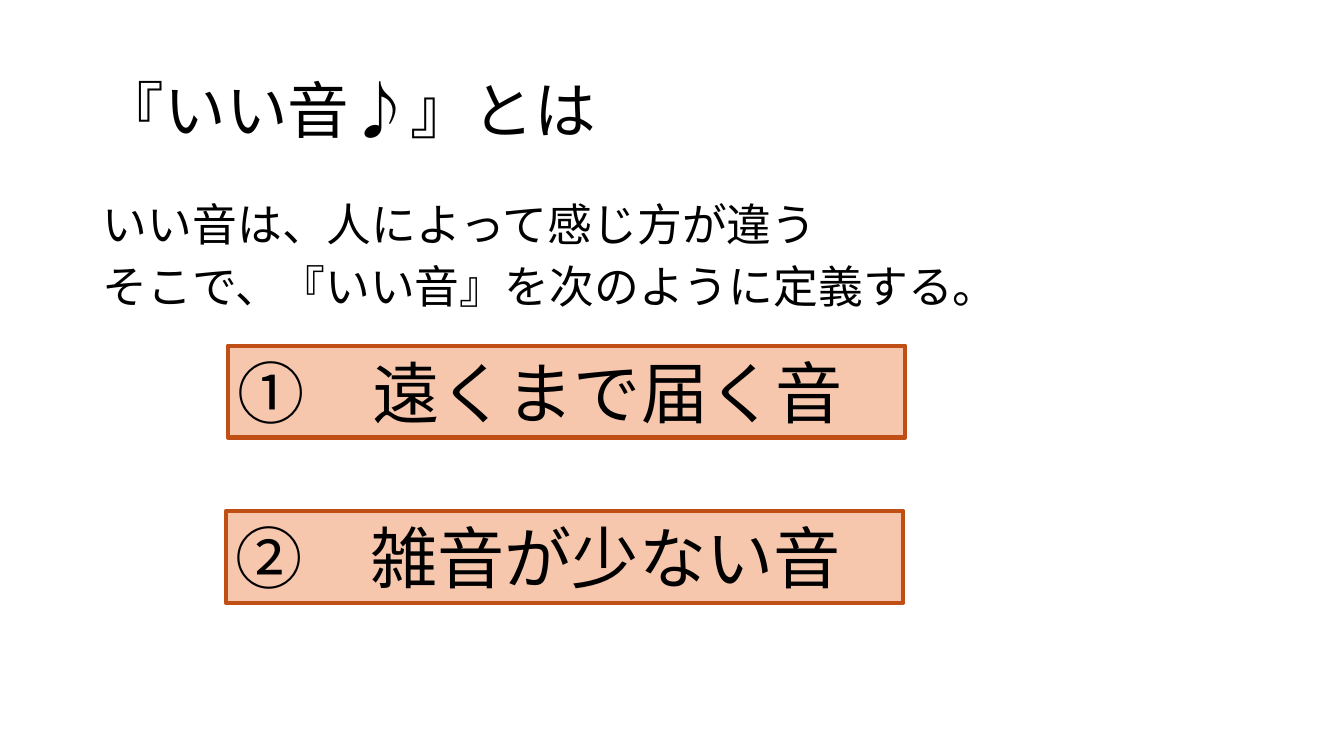
import pptx
import pptx.dml.color
import pptx.enum.shapes
import pptx.enum.text
import pptx.oxml
import pptx.oxml.ns
import pptx.util
from lxml import etree
from pptx.util import Inches

BLACK = pptx.dml.color.RGBColor(0x00, 0x00, 0x00)
PEACH = pptx.dml.color.RGBColor(0xF6, 0xC6, 0xAD)
RUST = pptx.dml.color.RGBColor(0xC0, 0x4F, 0x15)
FONT = "Noto Sans CJK JP"
ANCHOR = pptx.enum.text.MSO_ANCHOR
LEFT = pptx.enum.text.PP_ALIGN.LEFT


def apply(target, values):
    for name, value in values.items():
        setattr(target, name, value)


class DefinitionSlide:
    """Holds the text style and the slide being built."""

    def __init__(self, presentation):
        self.slide = presentation.slides.add_slide(presentation.slide_layouts[1])

    def place(self, shape, left, top, width, height):
        apply(shape, {"left": Inches(left), "top": Inches(top),
                      "width": Inches(width), "height": Inches(height)})

    def set_text(self, shape, lines, size, anchor, paragraph_format):
        frame = shape.text_frame
        apply(frame, {"text": "\n".join(lines), "word_wrap": True,
                      "vertical_anchor": anchor,
                      "auto_size": pptx.enum.text.MSO_AUTO_SIZE.NONE})
        for paragraph in frame.paragraphs:
            apply(paragraph, {"alignment": LEFT, **paragraph_format})
            for run in paragraph.runs:
                apply(run.font, {"name": FONT, "size": pptx.util.Pt(size)})
                run.font.color.rgb = BLACK
                east_asian = etree.SubElement(
                    run.font._element, pptx.oxml.ns.qn("a:ea"))
                east_asian.set("typeface", FONT)

    def title(self, text, position):
        shape = self.slide.shapes.title
        self.place(shape, *position)
        self.set_text(shape, [text], 44, ANCHOR.MIDDLE, {"line_spacing": 0.9})

    def body(self, lines, position):
        shape = self.slide.placeholders[1]
        self.place(shape, *position)
        self.set_text(shape, lines, 32, ANCHOR.TOP,
                      {"line_spacing": 0.9, "space_before": pptx.util.Pt(10)})
        # Plain lines without bullets or hanging indent
        for paragraph in shape.text_frame.paragraphs:
            properties = paragraph._p.get_or_add_pPr()
            properties.set("marL", "0")
            properties.set("indent", "0")
            etree.SubElement(properties, pptx.oxml.ns.qn("a:buNone"))

    def box(self, text, position):
        shape = self.slide.shapes.add_shape(
            pptx.enum.shapes.MSO_SHAPE.RECTANGLE, *map(Inches, position))
        shape.shadow.inherit = False
        shape.fill.solid()
        shape.fill.fore_color.rgb = PEACH
        shape.line.color.rgb = RUST
        shape.line.width = pptx.util.Pt(3)
        self.set_text(shape, [text], 48, ANCHOR.MIDDLE, {})


def main():
    presentation = pptx.Presentation()
    apply(presentation, {"slide_width": Inches(13.33),
                         "slide_height": Inches(7.5)})
    page = DefinitionSlide(presentation)

    # Heading and introduction
    page.title("『いい音♪』とは", (0.92, 0.4, 11.5, 1.45))
    page.body(["いい音は、人によって感じ方が違う",
               "そこで、『いい音』を次のように定義する。"],
              (0.92, 1.96, 11.5, 4.76))

    # The two definitions
    page.box("①　遠くまで届く音", (2.26, 3.43, 6.72, 0.91))
    page.box("②　雑音が少ない音", (2.24, 5.07, 6.72, 0.91))

    presentation.save("out.pptx")


if __name__ == "__main__":
    main()
